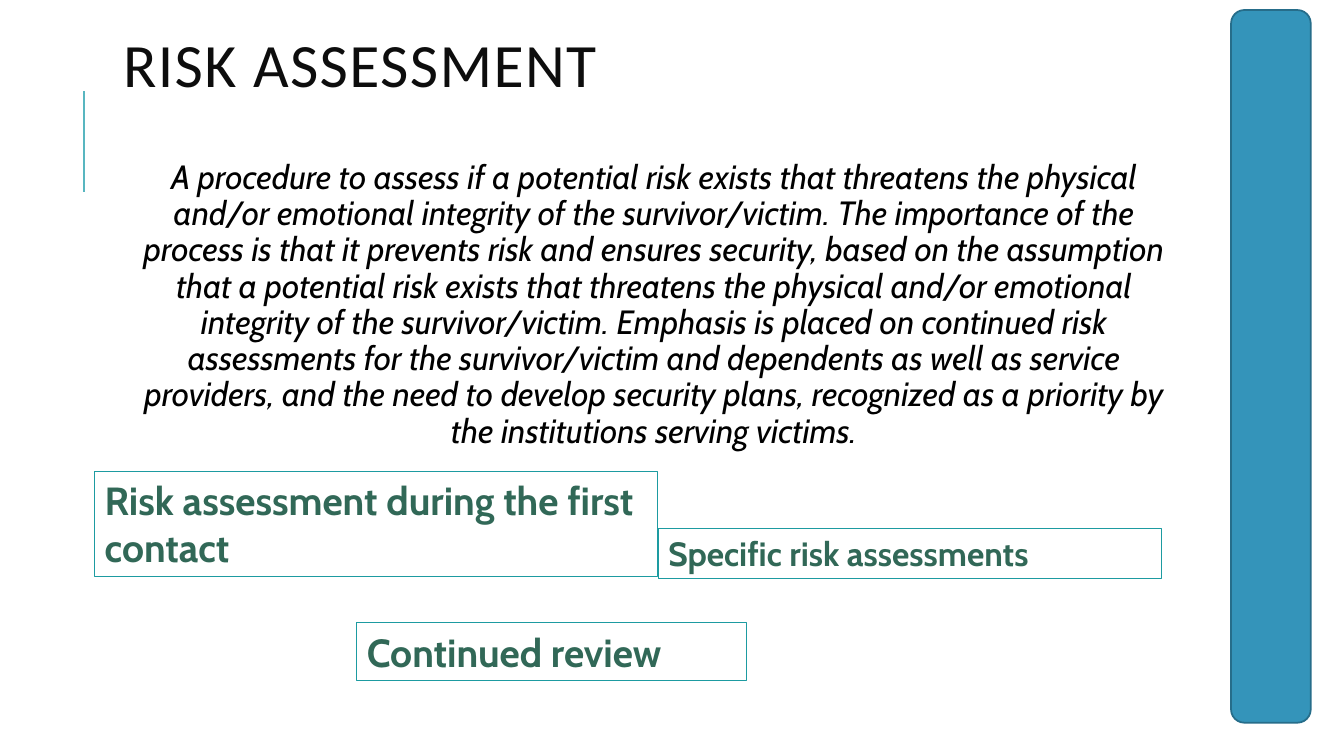
from lxml.etree import SubElement
from pptx import Presentation
from pptx.dml.color import RGBColor
from pptx.enum.shapes import MSO_CONNECTOR, MSO_SHAPE
from pptx.enum.text import MSO_ANCHOR, PP_ALIGN
from pptx.oxml.ns import qn
from pptx.util import Inches, Pt


def paint(color_format, hex_color):
    """Set a solid fill's or a font's colour from a hex string."""
    color_format.rgb = RGBColor.from_string(hex_color)


def write(paragraph, text, font_name, size, color, bold=False, italic=False):
    run = paragraph.add_run()
    run.text = text
    font = run.font
    font.name, font.size, font.bold, font.italic = font_name, Pt(size), bold, italic
    paint(font.color, color)
    return run


prs = Presentation()
prs.slide_width, prs.slide_height = Inches(13.33), Inches(7.5)
slide = prs.slides.add_slide(prs.slide_layouts[5])
shapes = slide.shapes

CONTENT_LEFT, CONTENT_WIDTH = Inches(1.12), Inches(10.63)

# Accent line beside the title
accent = shapes.add_connector(
    MSO_CONNECTOR.STRAIGHT, Inches(0.83), Inches(1.9), Inches(0.83), Inches(0.9))
paint(accent.line.fill.fore_color if accent.line.fill.solid() else accent.line.color, "58B6C0")
accent.line.width = Pt(1.5)
SubElement(accent.element.spPr, qn("a:effectLst"))

# Title
title = shapes.title
title.left, title.top = CONTENT_LEFT, Inches(0.1)
title.width, title.height = CONTENT_WIDTH, Inches(1.19)
title.text_frame.vertical_anchor = MSO_ANCHOR.MIDDLE
heading = title.text_frame.paragraphs[0]
heading.alignment = PP_ALIGN.LEFT
heading.line_spacing = 0.8
heading_run = write(heading, "RISK ASSESSMENT", "Calibri", 44, "0D0D0D")
heading_run.font.element.set("spc", "100") if hasattr(heading_run.font, "element") else \
    heading_run._r.get_or_add_rPr().set("spc", "100")

# Definition
definition = shapes.add_textbox(
    CONTENT_LEFT, Inches(0.96), CONTENT_WIDTH, Inches(3.75)).text_frame
definition.word_wrap = True
definition.margin_left, definition.margin_right = Inches(0.15), Inches(0.05)
definition.margin_top, definition.margin_bottom = Inches(0.63), Inches(0.05)
procedure = definition.paragraphs[0]
procedure.alignment = PP_ALIGN.CENTER
procedure.line_spacing = 0.9
write(procedure,
      "A procedure to assess if a potential risk exists that threatens the physical "
      "and/or emotional integrity of the survivor/victim. The importance of the process "
      "is that it prevents risk and ensures security, based on the assumption that a "
      "potential risk exists that threatens the physical and/or emotional integrity of "
      "the survivor/victim. Emphasis is placed on continued risk assessments for the "
      "survivor/victim and dependents as well as service providers, and the need to "
      "develop security plans, recognized as a priority by the institutions serving "
      "victims.",
      "Cabin", 24, "000000", italic=True)

# Side bar
side_bar = shapes.add_shape(
    MSO_SHAPE.ROUNDED_RECTANGLE, Inches(12.21), Inches(0.1), Inches(0.79), Inches(7.07))
side_bar.shadow.inherit = False
side_bar.fill.solid()
paint(side_bar.fill.fore_color, "3494BA")
paint(side_bar.line.color, "266D8A")
side_bar.line.width = Pt(1.25)

# Stages of the assessment: text, size, left, top, width, height
stages = [
    ("Risk assessment during the first contact", 28, 0.94, 4.68, 5.58, 1.04),
    ("Continued review", 28, 3.54, 6.18, 3.86, 0.57),
    ("Specific risk assessments", 24, 6.53, 5.24, 4.99, 0.5),
]
for text, size, *place in stages:
    stage = shapes.add_shape(MSO_SHAPE.RECTANGLE, *map(Inches, place))
    stage.shadow.inherit = False
    stage.fill.background()
    paint(stage.line.color, "1D9BA1")
    stage.line.width = Pt(0.75)
    frame = stage.text_frame
    frame.word_wrap = True
    frame.vertical_anchor = MSO_ANCHOR.TOP
    frame.paragraphs[0].alignment = PP_ALIGN.LEFT
    write(frame.paragraphs[0], text, "Cabin", size, "316857", bold=True)

prs.save("out.pptx")
